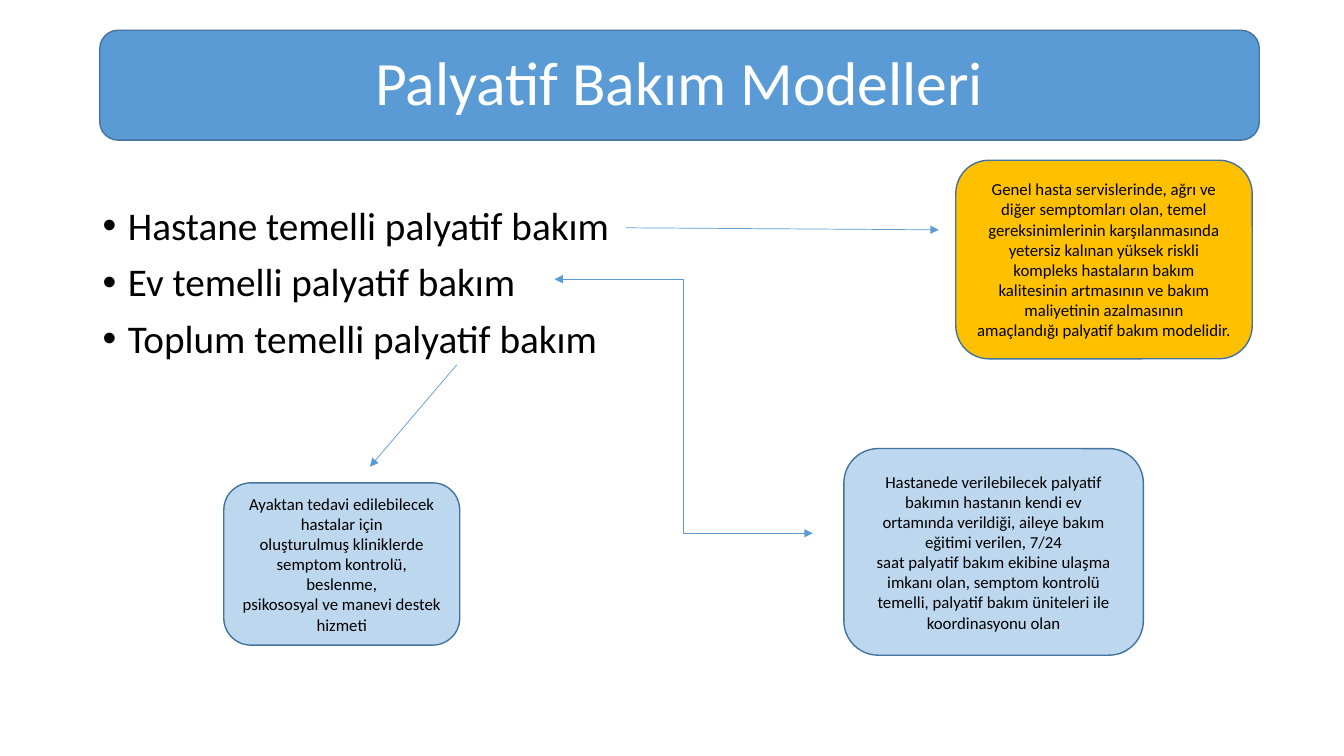
from dataclasses import dataclass

from lxml import etree
from pptx import Presentation
from pptx.dml.color import RGBColor
from pptx.enum.shapes import MSO_CONNECTOR, MSO_SHAPE
from pptx.enum.text import MSO_ANCHOR, PP_ALIGN
from pptx.oxml.ns import qn
from pptx.slide import Slide
from pptx.util import Inches, Pt

ROUNDED = MSO_SHAPE.ROUNDED_RECTANGLE
STRAIGHT = MSO_CONNECTOR.STRAIGHT
ELBOW = MSO_CONNECTOR.ELBOW
CENTER = PP_ALIGN.CENTER
MIDDLE = MSO_ANCHOR.MIDDLE

FONT = "Calibri"
BLUE, DARK_BLUE, PALE_BLUE = "5B9BD5", "43739E", "BDD7EE"
GOLD, BLACK, WHITE = "FFC000", "000000", "FFFFFF"


@dataclass
class Box:
    left: float
    top: float
    width: float
    height: float
    fill: str
    lines: list[str]
    size: int = 12
    color: str = BLACK
    line_spacing: float = 1.0


@dataclass
class Arrow:
    start: tuple[float, float]
    end: tuple[float, float]
    kind: MSO_CONNECTOR = STRAIGHT
    ends: tuple[str, ...] = ("tailEnd",)


MODELS = [
    "Hastane temelli palyatif bakım",
    "Ev temelli palyatif bakım",
    "Toplum temelli palyatif bakım",
]

BOXES = [
    Box(0.99, 0.3, 11.5, 1.09, BLUE, ["Palyatif Bakım Modelleri"], 44, WHITE, 0.9),
    Box(9.48, 1.59, 2.94, 1.97, GOLD, [
        "Genel hasta servislerinde, ağrı ve diğer semptomları olan, "
        "temel gereksinimlerinin karşılanmasında",
        "yetersiz kalınan yüksek riskli kompleks hastaların bakım",
        "kalitesinin artmasının ve bakım maliyetinin azalmasının",
        "amaçlandığı palyatif bakım modelidir.",
    ]),
    Box(8.37, 4.45, 2.97, 2.05, PALE_BLUE, [
        "Hastanede verilebilecek palyatif bakımın hastanın kendi ev",
        "ortamında verildiği, aileye bakım eğitimi verilen, 7/24",
        "saat palyatif bakım ekibine ulaşma imkanı olan, semptom kontrolü "
        "temelli, palyatif bakım üniteleri ile koordinasyonu olan",
    ]),
    Box(2.22, 4.79, 2.34, 1.61, PALE_BLUE, [
        "Ayaktan tedavi edilebilecek hastalar için",
        "oluşturulmuş kliniklerde semptom kontrolü, beslenme,",
        "psikososyal ve manevi destek hizmeti",
    ]),
]

ARROWS = [
    Arrow((4.53, 3.62), (3.67, 4.63)),
    Arrow((6.21, 2.26), (9.31, 2.28)),
    Arrow((5.5, 2.77), (8.06, 5.29), ELBOW, ("headEnd", "tailEnd")),
]


def rgb(color: str) -> RGBColor:
    return RGBColor.from_string(color)


def set_font(paragraph, size: int, color: str) -> None:
    paragraph.font.name = FONT
    paragraph.font.size = Pt(size)
    paragraph.font.color.rgb = rgb(color)


def add_models(slide: Slide) -> None:
    """Add the bulleted list of care models."""
    shape = slide.shapes.add_textbox(Inches(0.92), Inches(2), Inches(11.5), Inches(4.76))
    frame = shape.text_frame
    frame.word_wrap = True
    frame.text = "\n".join(MODELS)
    for index, paragraph in enumerate(frame.paragraphs):
        properties = paragraph._p.get_or_add_pPr()
        properties.set("marL", str(Inches(0.25)))
        properties.set("indent", str(-Inches(0.25)))
        bullet_font = etree.SubElement(properties, qn("a:buFont"))
        bullet_font.set("typeface", "Arial")
        etree.SubElement(properties, qn("a:buChar")).set("char", "•")
        paragraph.line_spacing = 0.9
        paragraph.space_before = Pt(10 if index else 0)
        set_font(paragraph, 28, BLACK)


def add_box(slide: Slide, box: Box) -> None:
    shape = slide.shapes.add_shape(
        ROUNDED, Inches(box.left), Inches(box.top), Inches(box.width), Inches(box.height)
    )
    shape.shadow.inherit = False
    shape.fill.solid()
    shape.fill.fore_color.rgb = rgb(box.fill)
    shape.line.color.rgb = rgb(DARK_BLUE)
    shape.line.width = Pt(1)
    frame = shape.text_frame
    frame.word_wrap = True
    frame.vertical_anchor = MIDDLE
    frame.text = "\n".join(box.lines)
    for paragraph in frame.paragraphs:
        paragraph.alignment = CENTER
        paragraph.line_spacing = box.line_spacing
        set_font(paragraph, box.size, box.color)


def add_arrow(slide: Slide, arrow: Arrow) -> None:
    points = [Inches(value) for value in (*arrow.start, *arrow.end)]
    connector = slide.shapes.add_connector(arrow.kind, *points)
    connector.line.color.rgb = rgb(BLUE)
    connector.line.width = Pt(0.5)
    line = connector.line._get_or_add_ln()
    for end in arrow.ends:
        etree.SubElement(line, qn(f"a:{end}")).set("type", "triangle")
    etree.SubElement(connector._element.spPr, qn("a:effectLst"))


def main() -> None:
    presentation = Presentation()
    presentation.slide_width = Inches(13.33)
    presentation.slide_height = Inches(7.5)
    slide = presentation.slides.add_slide(presentation.slide_layouts[6])
    add_models(slide)
    for box in BOXES:
        add_box(slide, box)
    for arrow in ARROWS:
        add_arrow(slide, arrow)
    presentation.save("out.pptx")


if __name__ == "__main__":
    main()
